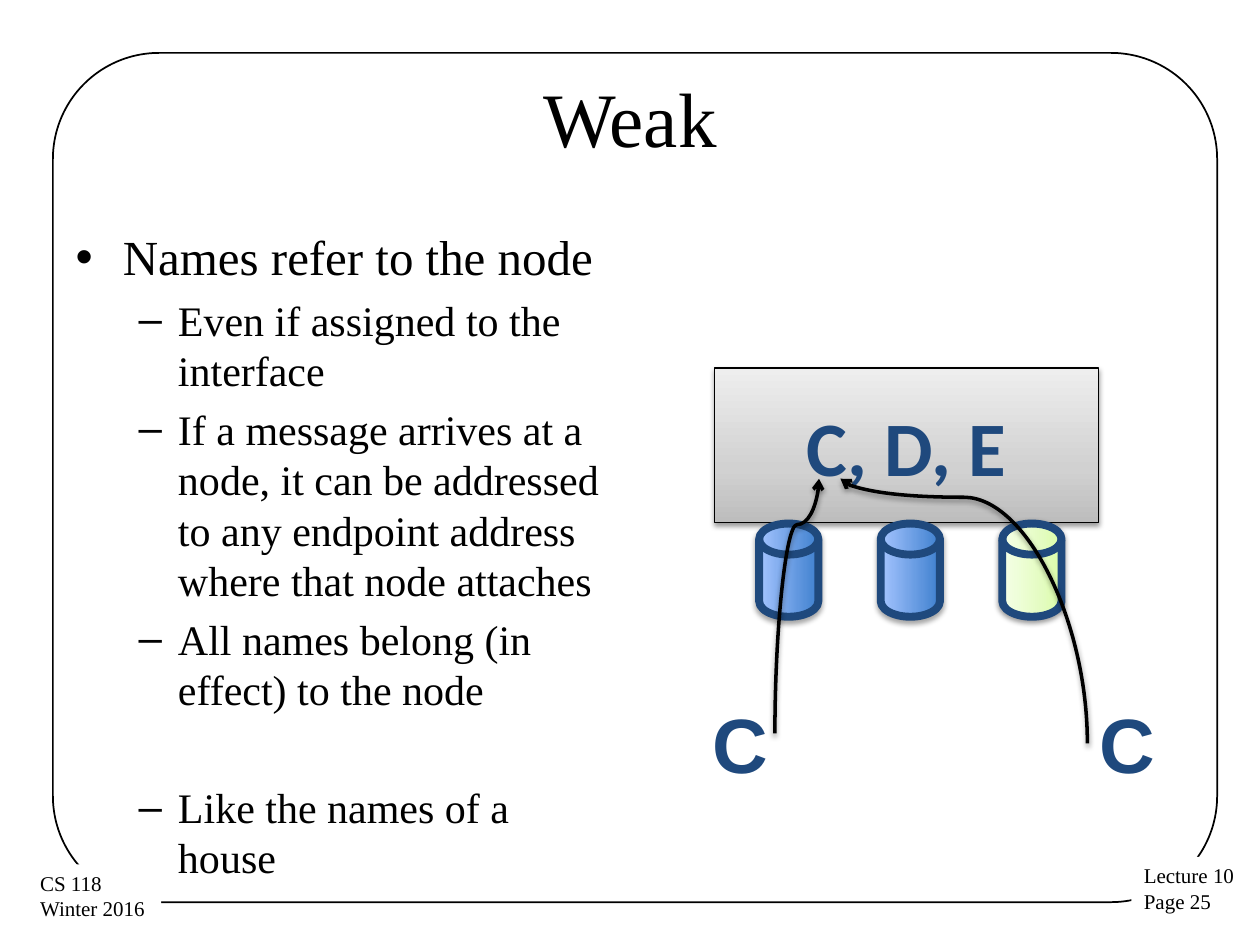
from lxml import etree
from pptx import Presentation
from pptx.dml.color import RGBColor
from pptx.enum.shapes import MSO_CONNECTOR, MSO_SHAPE
from pptx.enum.text import MSO_ANCHOR, MSO_AUTO_SIZE, PP_ALIGN
from pptx.oxml.ns import qn
from pptx.util import Inches, Pt

RECT, FRAME = MSO_SHAPE.RECTANGLE, MSO_SHAPE.ROUNDED_RECTANGLE
DRUM = MSO_SHAPE.FLOWCHART_DIRECT_ACCESS_STORAGE
CURVE = MSO_CONNECTOR.CURVE
CENTER, MIDDLE, TOP = PP_ALIGN.CENTER, MSO_ANCHOR.MIDDLE, MSO_ANCHOR.TOP
FIT_SHAPE, NO_FIT = MSO_AUTO_SIZE.SHAPE_TO_FIT_TEXT, MSO_AUTO_SIZE.NONE

COLORS = {"ink": "000000", "paper": "FFFFFF", "navy": "1F497D"}
GRADIENTS = {
    "gray": [(0, "BDBDBD"), (35, "D1D1D1"), (100, "EEEEEE")],
    "blue": [(0, "3F80CE"), (100, "A4C4FF")],
    "green": [(0, "DAFDA7"), (35, "E4FCC2"), (100, "F5FFE7")],
}
SERIF = "Times New Roman"
POINTS = [
    ("Even if assigned to the interface", None),
    ("If a message arrives at a node, it can be addressed to any endpoint "
     "address where that node attaches", None),
    ("All names belong (in effect) to the node", None),
    ("Like the names of a house", 38.5),
]


def rgb(name):
    """Return the named colour."""
    return RGBColor.from_string(COLORS[name])


def add_run(paragraph, text, size, font, color="ink", bold=None):
    """Add one formatted run to a paragraph."""
    run = paragraph.add_run()
    run.text = text
    run.font.size, run.font.name, run.font.bold = Pt(size), font, bold
    run.font.color.rgb = rgb(color)


def set_line(shape, color, width):
    """Give a shape or connector a solid line."""
    shape.line.color.rgb = rgb(color)
    shape.line.width = Pt(width)


def add_color(parent, tag, value, **attributes):
    """Append an element that holds one RGB colour, and return the colour."""
    holder = etree.SubElement(parent, qn(tag), attributes)
    return etree.SubElement(holder, qn("a:srgbClr"), val=value)


def add_shadow(effects, distance=1.6, opacity=38):
    """Append a soft downward shadow to an effect list."""
    color = add_color(effects, "a:outerShdw", COLORS["ink"], blurRad=str(Pt(3.1)),
                      dist=str(Pt(distance)), dir="5400000", rotWithShape="0")
    etree.SubElement(color, qn("a:alpha"), val=str(opacity * 1000))


def add_gradient_shape(slide, kind, box, gradient, line, **shadow):
    """Add a shape with an upward gradient, an outline and a shadow."""
    shape = slide.shapes.add_shape(kind, *map(Inches, box))
    shape.fill.gradient()
    shape.fill.gradient_angle = 90
    stops = shape.element.spPr.find(qn("a:gradFill")).find(qn("a:gsLst"))
    for stop in list(stops):
        stops.remove(stop)
    for position, color in GRADIENTS[gradient]:
        add_color(stops, "a:gs", color, pos=str(position * 1000))
    set_line(shape, *line)
    shape.shadow.inherit = False
    add_shadow(shape.element.spPr.find(qn("a:effectLst")), **shadow)
    return shape


def add_label(slide, box, lines, size, font, color="ink", bold=None):
    """Add an unwrapped text box with one paragraph for each line."""
    label = slide.shapes.add_textbox(*map(Inches, box))
    frame = label.text_frame
    frame.word_wrap, frame.auto_size = False, FIT_SHAPE
    for index, line in enumerate(lines):
        paragraph = frame.add_paragraph() if index else frame.paragraphs[0]
        add_run(paragraph, line, size, font, color, bold)
    return label


def add_curve(slide, start, end, bend):
    """Add a curved arrow that leaves and arrives vertically."""
    mid_x, mid_y = (start[0] + end[0]) / 2, (start[1] + end[1]) / 2
    turned = [(mid_x - (y - mid_y), mid_y + (x - mid_x)) for x, y in (start, end)]
    curve = slide.shapes.add_connector(CURVE, *(Inches(v) for point in turned for v in point))
    set_line(curve, "ink", 2)
    properties = curve.element.spPr
    properties.find(qn("a:xfrm")).set("rot", "16200000")
    guides = properties.find(qn("a:prstGeom")).find(qn("a:avLst"))
    etree.SubElement(guides, qn("a:gd"), name="adj1", fmla=f"val {round(bend * 100000)}")
    etree.SubElement(properties.find(qn("a:ln")), qn("a:tailEnd"), type="arrow")
    add_shadow(etree.SubElement(properties, qn("a:effectLst")))


def build_frame(slide, box):
    """Place the rounded border and the two corner labels behind the content."""
    left, top, width, height = box
    border = slide.shapes.add_shape(FRAME, *map(Inches, box))
    border.adjustments[0] = 0.125
    border.fill.background()
    set_line(border, "ink", 1)
    border.shadow.inherit = False
    right, bottom = left + width, top + height
    lecture = add_label(slide, (right - 0.68, bottom - 0.36, 0.93, 0.51),
                        ["Lecture 10", "Page 25"], 12, SERIF)
    course = add_label(slide, (left - 0.2, bottom - 0.3, 1.06, 0.51),
                       ["CS 118", "Winter 2016"], 12, SERIF)
    for label in (lecture, course):
        label.fill.solid()
        label.fill.fore_color.rgb = rgb("paper")
    for part in (border, lecture, course):
        slide.shapes.title.element.addprevious(part.element)


def place(placeholder, box, anchor):
    """Move a placeholder and return its text frame."""
    placeholder.left, placeholder.top, placeholder.width, placeholder.height = map(Inches, box)
    frame = placeholder.text_frame
    frame.word_wrap, frame.auto_size, frame.vertical_anchor = True, NO_FIT, anchor
    return frame


def build_title(slide, box):
    """Fill the title placeholder."""
    heading = place(slide.shapes.title, box, MIDDLE).paragraphs[0]
    heading.alignment = CENTER
    add_run(heading, "Weak", 44, SERIF)


def build_points(slide, box):
    """Fill the body placeholder with the main point and its details."""
    frame = place(slide.placeholders[1], box, TOP)
    add_run(frame.paragraphs[0], "Names refer to the node", 28, SERIF)
    for text, gap in POINTS:
        point = frame.add_paragraph()
        point.level = 1
        if gap:
            point.space_before = Pt(gap)
        add_run(point, text, 24, SERIF)


def build_node(slide, box):
    """Draw the node, its three interfaces and the messages that reach it."""
    left, top, width, height = box
    node = add_gradient_shape(slide, RECT, box, "gray", ("ink", 0.75))
    node.text_frame.vertical_anchor = MIDDLE
    names = node.text_frame.paragraphs[0]
    names.alignment = CENTER
    add_run(names, "C, D, E", 44, "Calibri", "navy", True)

    bottom = top + height
    interfaces = [("blue", 1.8, 35), ("blue", 1.8, 35), ("green", 1.6, 38)]
    for index, (gradient, distance, opacity) in enumerate(interfaces):
        drum_box = (left + 0.22 + 0.965 * index, bottom + 0.14, 0.74, 0.47)
        drum = add_gradient_shape(slide, DRUM, drum_box, gradient, ("navy", 4.5),
                                  distance=distance, opacity=opacity)
        drum.rotation = 270

    tip = top + 0.88
    add_curve(slide, (left + 0.48, bottom + 1.67), (left + 0.83, tip), 0.82)
    add_curve(slide, (left + 2.96, bottom + 1.75), (left + 1, tip), 0.93)
    for x in (left - 0.11, left + 2.96):
        add_label(slide, (x, bottom + 1.33, 0.65, 0.84), ["C"], 44, "Arial", "navy", True)


def main():
    """Build and save the slide."""
    deck = Presentation()
    deck.slide_width, deck.slide_height = Inches(10), Inches(7.5)
    slide = deck.slides.add_slide(deck.slide_layouts[1])
    build_frame(slide, (0.42, 0.42, 9.24, 6.74))
    build_title(slide, (0.5, 0.3, 9, 1.25))
    build_points(slide, (0.5, 1.75, 4.42, 4.95))
    build_node(slide, (5.67, 2.92, 3.05, 1.23))
    deck.save("out.pptx")


if __name__ == "__main__":
    main()
